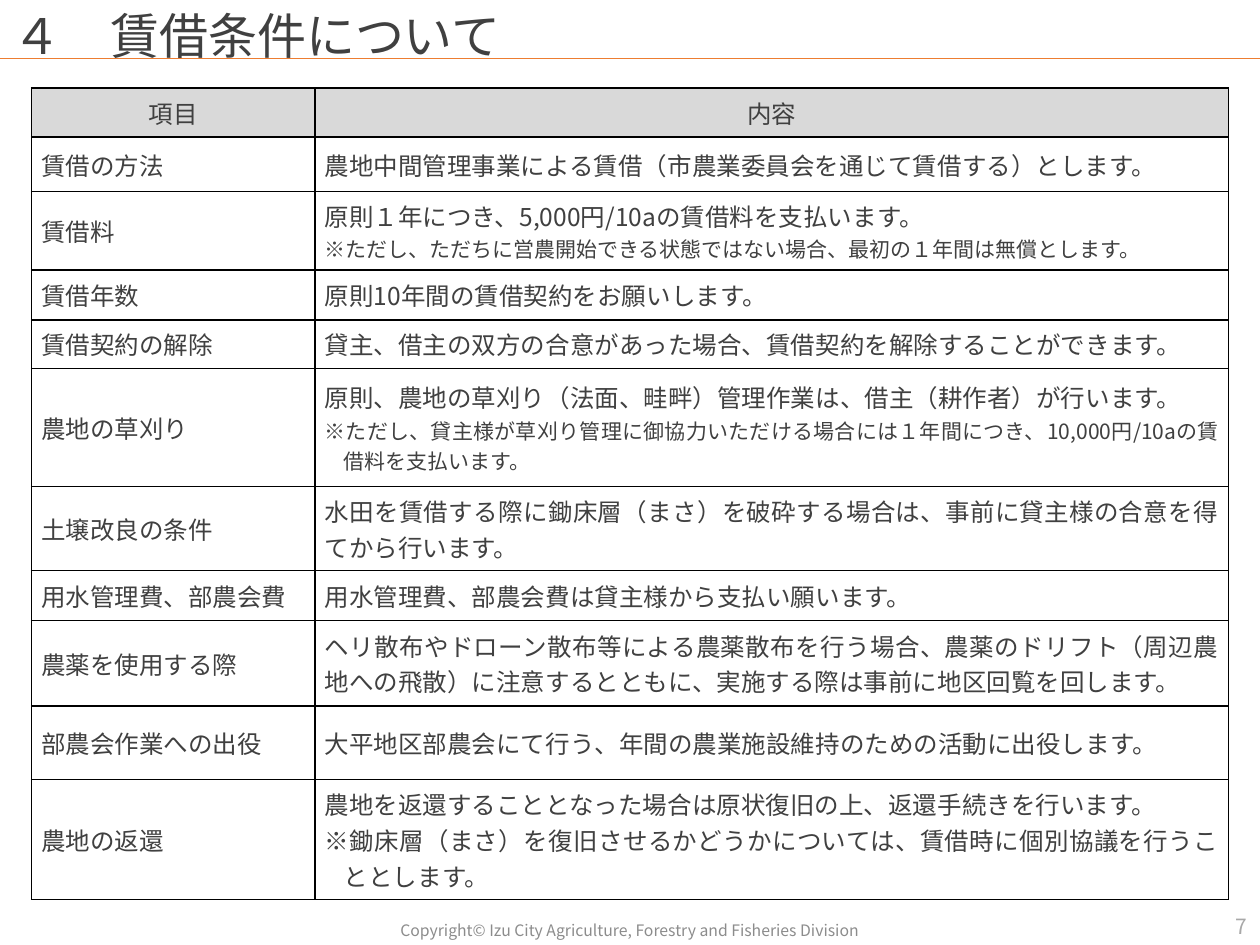
from lxml.etree import SubElement
from pptx import Presentation
from pptx.dml.color import RGBColor as RGB
from pptx.enum.shapes import MSO_CONNECTOR as CONN
from pptx.enum.text import MSO_ANCHOR as ANCHOR, MSO_AUTO_SIZE as AUTO, PP_ALIGN as ALIGN
from pptx.oxml.ns import qn
from pptx.util import Pt

FONT = "Noto Sans CJK JP"
COLORS = {"text": "404040", "head": "D9D9D9", "border": "000000",
          "rule": "ED7D31", "footer": "8C8C8C", "number": "A8A8A8"}
TITLE = "４　賃借条件について"
HEADER = ("項目", "内容")
# (height, item, main text, optional note, note size)
ROWS = [
    (31, "賃借の方法", "農地中間管理事業による賃借（市農業委員会を通じて賃借する）とします。"),
    (45, "賃借料", "原則１年につき、5,000円/10aの賃借料を支払います。",
     "※ただし、ただちに営農開始できる状態ではない場合、最初の１年間は無償とします。", 12),
    (28.5, "賃借年数", "原則10年間の賃借契約をお願いします。"),
    (27.5, "賃借契約の解除", "貸主、借主の双方の合意があった場合、賃借契約を解除することができます。"),
    (67.5, "農地の草刈り", "原則、農地の草刈り（法面、畦畔）管理作業は、借主（耕作者）が行います。",
     "※ただし、貸主様が草刈り管理に御協力いただける場合には１年間につき、10,000円/10aの賃借料を支払います。", 12),
    (48, "土壌改良の条件",
     "水田を賃借する際に鋤床層（まさ）を破砕する場合は、事前に貸主様の合意を得てから行います。"),
    (28.5, "用水管理費、部農会費", "用水管理費、部農会費は貸主様から支払い願います。"),
    (49, "農薬を使用する際",
     "ヘリ散布やドローン散布等による農薬散布を行う場合、農薬のドリフト（周辺農地への飛散）に注意するとともに、"
     "実施する際は事前に地区回覧を回します。"),
    (42, "部農会作業への出役", "大平地区部農会にて行う、年間の農業施設維持のための活動に出役します。"),
    (68.5, "農地の返還", "農地を返還することとなった場合は原状復旧の上、返還手続きを行います。",
     "※鋤床層（まさ）を復旧させるかどうかについては、賃借時に個別協議を行うこととします。", 14),
]
HEAD_H, COLS = 28, (162, 522)
TABLE_LEFT, TABLE_TOP = 18, 50.4
LABELS = [
    ((181.4, 522.7, 356.4, 17.3), "Copyright© Izu City Agriculture, Forestry and Fisheries Division",
     9, "footer", ALIGN.CENTER),
    ((558, 514.8, 162, 28.8), "7", 12, "number", ALIGN.RIGHT),
]
FRAME = {"word_wrap": True, "auto_size": AUTO.NONE, "vertical_anchor": ANCHOR.MIDDLE}
CELL = {"vertical_anchor": ANCHOR.MIDDLE, "margin_left": Pt(5.5), "margin_right": Pt(5.5),
        "margin_top": Pt(3.6), "margin_bottom": Pt(3.6)}


def apply(obj, values):
    for name, value in values.items():
        setattr(obj, name, value)


def write(p, text, size, color="text", align=ALIGN.LEFT):
    p.alignment = align
    r = p.add_run()
    r.text = text
    r.font.color.rgb = RGB.from_string(COLORS[color])
    apply(r.font, {"size": Pt(size), "name": FONT})
    SubElement(r._r.get_or_add_rPr(), qn("a:ea"), typeface=FONT)


def place(s, box):
    apply(s, dict(zip(("left", "top", "width", "height"), map(Pt, box))))


def style_cell(cell, fill=None):
    apply(cell, CELL)
    tcPr = cell._tc.get_or_add_tcPr()
    for side in ("lnL", "lnR", "lnT", "lnB"):
        ln = SubElement(tcPr, qn(f"a:{side}"), w=str(Pt(0.96)))
        SubElement(SubElement(ln, qn("a:solidFill")), qn("a:srgbClr"), val=COLORS["border"])
    if fill:
        cell.fill.solid()
        cell.fill.fore_color.rgb = RGB.from_string(COLORS[fill])
    else:
        cell.fill.background()


def add_terms(s):
    heights = [HEAD_H] + [row[0] for row in ROWS]
    frame = s.shapes.add_table(len(heights), len(COLS), Pt(TABLE_LEFT), Pt(TABLE_TOP),
                               Pt(sum(COLS)), Pt(sum(heights)))
    table = frame.table
    for col, width in zip(table.columns, COLS):
        col.width = Pt(width)
    for row, height in zip(table.rows, heights):
        row.height = Pt(height)
    for cell, text in zip(table.rows[0].cells, HEADER):
        style_cell(cell, "head")
        write(cell.text_frame.paragraphs[0], text, 14, align=ALIGN.CENTER)
    for i, (_, item, content, *note) in enumerate(ROWS, 1):
        for cell, text in zip(table.rows[i].cells, (item, content)):
            style_cell(cell)
            write(cell.text_frame.paragraphs[0], text, 14, align=ALIGN.JUSTIFY)
        if note:
            p = table.cell(i, 1).text_frame.add_paragraph()
            apply_indent = p._p.get_or_add_pPr()
            apply_indent.set("marL", str(Pt(11)))
            apply_indent.set("indent", str(-Pt(11)))
            write(p, *note, align=ALIGN.JUSTIFY)


def main():
    """Build the slide of farmland lease terms."""
    prs = Presentation()
    prs.slide_width, prs.slide_height = Pt(720), Pt(540)
    s = prs.slides.add_slide(prs.slide_layouts[5])

    rule = s.shapes.add_connector(CONN.STRAIGHT, 0, Pt(33.5), Pt(720), Pt(33.5))
    rule.line.color.rgb = RGB.from_string(COLORS["rule"])
    rule.line.width = Pt(0.75)
    SubElement(rule._element.spPr, qn("a:effectLst"))

    title = s.shapes.title
    place(title, (0, 0, 720, 44))
    apply(title.text_frame, FRAME)
    p = title.text_frame.paragraphs[0]
    p.line_spacing = 0.9
    write(p, TITLE, 28)

    add_terms(s)
    for box, text, size, color, align in LABELS:
        tf = s.shapes.add_textbox(*map(Pt, box)).text_frame
        apply(tf, FRAME)
        write(tf.paragraphs[0], text, size, color, align)
    prs.save("out.pptx")


if __name__ == "__main__":
    main()
